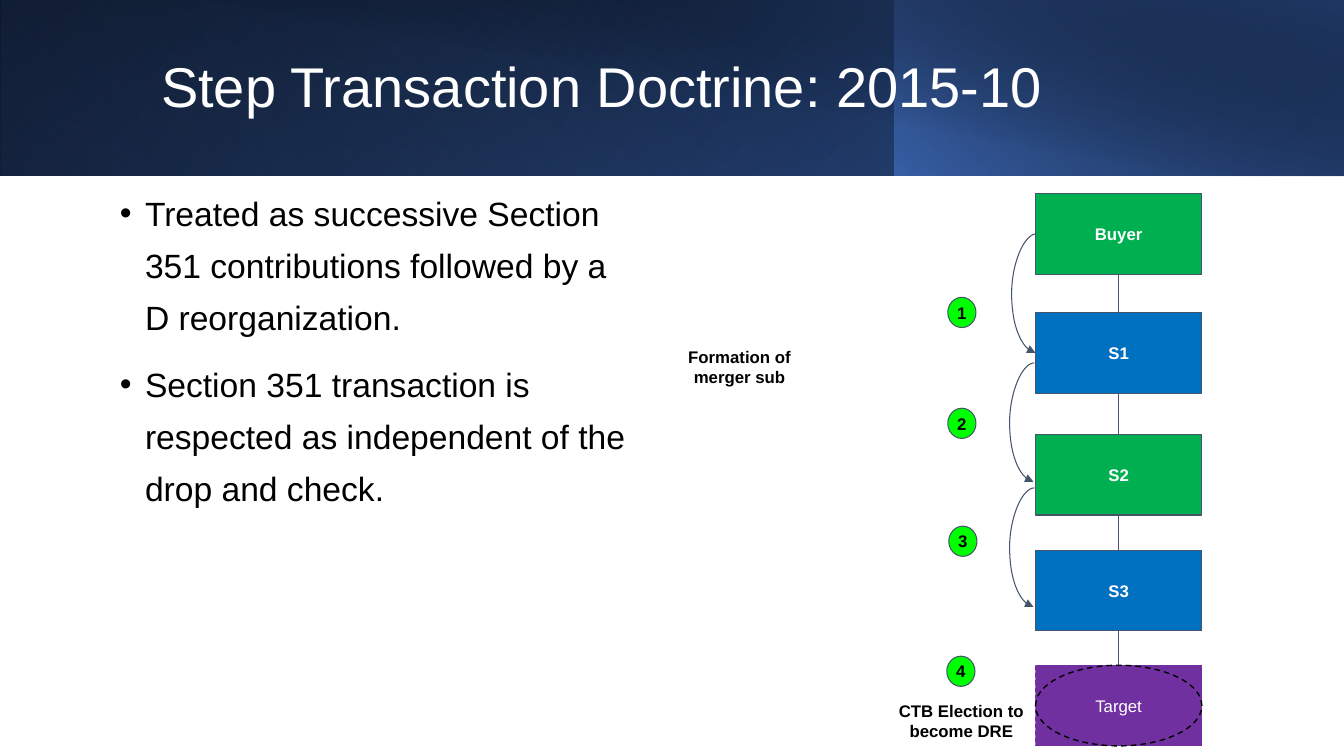
from lxml import etree
from pptx import Presentation
from pptx.dml.color import RGBColor
from pptx.enum.dml import MSO_LINE
from pptx.enum.shapes import MSO_CONNECTOR, MSO_SHAPE
from pptx.enum.text import MSO_ANCHOR, PP_ALIGN
from pptx.oxml.ns import qn
from pptx.util import Inches, Pt

RECT, OVAL = MSO_SHAPE.RECTANGLE, MSO_SHAPE.OVAL
STRAIGHT, CURVE = MSO_CONNECTOR.STRAIGHT, MSO_CONNECTOR.CURVE
MIDDLE, TOP = MSO_ANCHOR.MIDDLE, MSO_ANCHOR.TOP
CENTER, LEFT = PP_ALIGN.CENTER, PP_ALIGN.LEFT
DASH = MSO_LINE.DASH

WHITE = RGBColor(0xFF, 0xFF, 0xFF)
BLACK = RGBColor(0, 0, 0)
GREEN = RGBColor(0x00, 0xB0, 0x50)
BLUE = RGBColor(0x00, 0x70, 0xC0)
PURPLE = RGBColor(0x70, 0x30, 0xA0)
LIME = RGBColor(0x00, 0xFF, 0x00)
SLATE = RGBColor(0x44, 0x54, 0x6A)

TITLE = "Step Transaction Doctrine: 2015-10"
BULLETS = [
    "Treated as successive Section 351 contributions followed by a D reorganization.",
    "Section 351 transaction is respected as independent of the drop and check.",
]
# left, width, height, rotation, flipped, angle, stops (position %, colour, opacity %)
BANDS = [
    (0, 13.33, 1.74, 0, True, 140, [(0, "000000", 100), (100, "2F5597", 100)]),
    (0, 8.88, 1.74, 180, True, 230, [(20, "4472C4", 0), (100, "203864", 55)]),
    (8.87, 4.46, 1.74, 0, True, 220, [(0, "4472C4", 66), (100, "000000", 30)]),
    (0.5, 12.83, 1.75, 0, False, 280, [(50, "000000", 0), (99, "203864", 52)]),
]
# name, top, fill
COMPANIES = [
    ("Buyer", 1.92, GREEN),
    ("S1", 3.1, BLUE),
    ("S2", 4.31, GREEN),
    ("S3", 5.46, BLUE),
]
BOX_X, BOX_W, BOX_H = 10.27, 1.65, 0.8
TARGET_Y = 6.6
STEPS = [(9.4, 2.95), (9.4, 4.05), (9.41, 5.22), (9.39, 6.51)]
# right end, top of each drop-down arrow
DROPS = [(10.28, 2.32), (10.26, 3.6), (10.26, 4.84)]
DROP_H, DROP_W, DROP_BULGE = 1.18, 0.01, 0.25
LABELS = [("Formation of merger sub", 6.61, 3.34),
          ("CTB Election to become DRE", 8.81, 6.85)]

prs = Presentation()
prs.slide_width, prs.slide_height = Inches(13.33), Inches(7.5)
slide = prs.slides.add_slide(prs.slide_layouts[6])
shapes = slide.shapes


def write(sp, lines, size, color, bold=False, align=CENTER, anchor=MIDDLE, inset=None):
    tf = sp.text_frame
    tf.word_wrap = True
    tf.vertical_anchor = anchor
    if inset is not None:
        tf.margin_left = tf.margin_right = tf.margin_top = tf.margin_bottom = Inches(inset)
    tf.text = "\n".join(lines)
    for p in tf.paragraphs:
        p.alignment = align
        p.font.name, p.font.size, p.font.bold = "Arial", Pt(size), bold
        p.font.color.rgb = color
    return tf.paragraphs


def add_shape(kind, x, y, w, h, fill, line=SLATE, width=0.75, dash=None):
    sp = shapes.add_shape(kind, Inches(x), Inches(y), Inches(w), Inches(h))
    sp.shadow.inherit = False
    sp.fill.solid()
    sp.fill.fore_color.rgb = fill
    sp.line.color.rgb = line
    sp.line.width = Pt(width)
    if dash:
        sp.line.dash_style = dash
    return sp


def add_text(x, y, w, h):
    return shapes.add_textbox(Inches(x), Inches(y), Inches(w), Inches(h))


def add_line(kind, x1, y1, x2, y2):
    cn = shapes.add_connector(kind, Inches(x1), Inches(y1), Inches(x2), Inches(y2))
    cn.line.color.rgb = SLATE
    cn.line.width = Pt(0.75)
    etree.SubElement(cn.element.spPr, qn("a:effectLst"))
    return cn


def add_band(x, w, h, rotation, flipped, angle, stops):
    """Header rectangle with a gradient whose stops may be see-through."""
    sp = add_shape(RECT, x, 0, w, h, BLACK)
    sp.line.fill.background()
    sp.rotation = rotation
    spPr = sp.element.spPr
    if flipped:
        spPr.find(qn("a:xfrm")).set("flipH", "1")
    grad = etree.Element(qn("a:gradFill"), rotWithShape="1")
    gs_list = etree.SubElement(grad, qn("a:gsLst"))
    for pos, color, opacity in stops:
        gs = etree.SubElement(gs_list, qn("a:gs"), pos=str(pos * 1000))
        clr = etree.SubElement(gs, qn("a:srgbClr"), val=color)
        if opacity < 100:
            etree.SubElement(clr, qn("a:alpha"), val=str(opacity * 1000))
    etree.SubElement(grad, qn("a:lin"), ang=str(angle * 60000), scaled="0")
    spPr.replace(spPr.find(qn("a:solidFill")), grad)


# Header and bullets
for band in BANDS:
    add_band(*band)
for p in write(add_text(1.5, 0.32, 10.82, 1.13), [TITLE], 40, WHITE, align=LEFT):
    p.line_spacing = 0.9
for p in write(add_text(1.09, 1.74, 5.26, 5.59), BULLETS, 24, BLACK, align=LEFT, anchor=TOP):
    p.line_spacing = 1.3
    p.space_before = Pt(10)
    pPr = p._p.get_or_add_pPr()
    pPr.set("marL", str(Inches(0.25)))
    pPr.set("indent", str(-Inches(0.25)))
    bullet_font = etree.Element(qn("a:buFont"), typeface="Arial")
    bullet = etree.Element(qn("a:buChar"), char="•")
    pPr.find(qn("a:spcBef")).addnext(bullet_font)
    bullet_font.addnext(bullet)

# Ownership chain
chain = []
for name, top, fill in COMPANIES:
    box = add_shape(RECT, BOX_X, top, BOX_W, BOX_H, fill)
    write(box, [name], 12, WHITE, bold=True, inset=0.1)
    chain.append(box)
chain.append(add_shape(RECT, BOX_X, TARGET_Y, BOX_W, BOX_H, PURPLE, PURPLE, dash=DASH))
for parent, child in zip(chain, chain[1:]):
    link = add_line(STRAIGHT, 0, 0, 0, 0)
    link.begin_connect(parent, 2)
    link.end_connect(child, 0)
target = add_shape(OVAL, BOX_X, TARGET_Y, BOX_W, BOX_H, PURPLE, BLACK, 1, DASH)
write(target, ["Target"], 12, WHITE)

# Steps, drop-down arrows and labels
for number, (x, y) in enumerate(STEPS, 1):
    badge = add_shape(OVAL, x, y, 0.28, 0.3, LIME)
    write(badge, [str(number)], 12, BLACK, bold=True, inset=0)
for x, y in DROPS:
    arrow = add_line(CURVE, x, y, x - DROP_W, y + DROP_H)
    guides = arrow.element.spPr.find(qn("a:prstGeom")).find(qn("a:avLst"))
    bulge = round(DROP_BULGE / DROP_W * 100000)
    etree.SubElement(guides, qn("a:gd"), name="adj1", fmla=f"val {bulge}")
    etree.SubElement(arrow.line._get_or_add_ln(), qn("a:tailEnd"), type="triangle")
for text, x, y in LABELS:
    write(add_text(x, y, 1.45, 0.3), [text], 12, BLACK, bold=True, anchor=TOP, inset=0.1)

prs.save("out.pptx")
